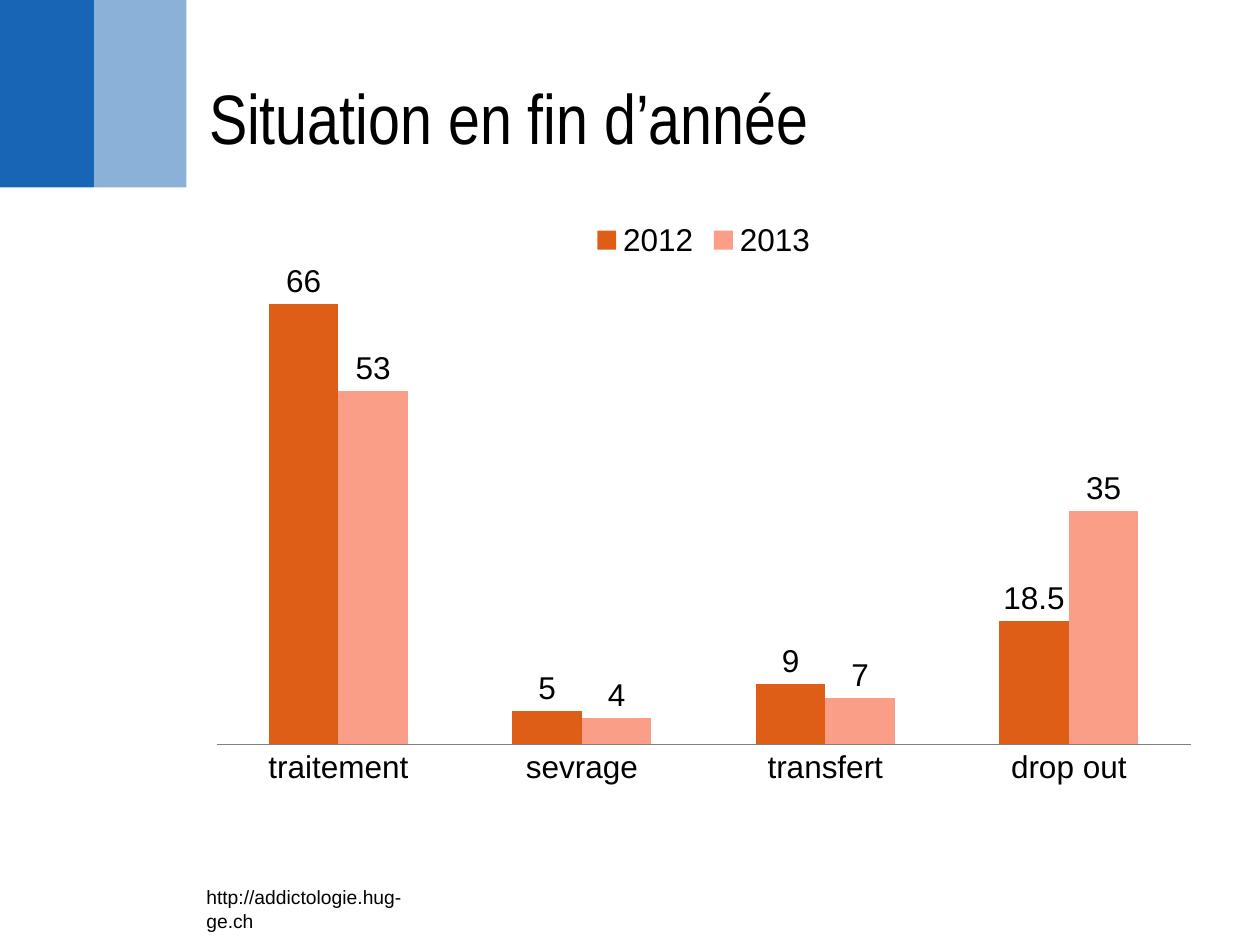
from lxml import etree
from pptx import Presentation
from pptx.chart.data import CategoryChartData
from pptx.dml.color import RGBColor
from pptx.enum.chart import (XL_CHART_TYPE, XL_LABEL_POSITION,
                             XL_LEGEND_POSITION, XL_TICK_MARK)
from pptx.enum.shapes import MSO_CONNECTOR, MSO_SHAPE
from pptx.enum.text import MSO_ANCHOR, PP_ALIGN
from pptx.oxml import parse_xml
from pptx.oxml.ns import nsdecls, qn
from pptx.util import Cm, Pt

COLUMN = XL_CHART_TYPE.COLUMN_CLUSTERED
OUTSIDE = XL_LABEL_POSITION.OUTSIDE_END
TOP = XL_LEGEND_POSITION.TOP
NO_TICK = XL_TICK_MARK.NONE
STRAIGHT = MSO_CONNECTOR.STRAIGHT
RECT = MSO_SHAPE.RECTANGLE
LEFT = PP_ALIGN.LEFT
MIDDLE = MSO_ANCHOR.MIDDLE
UPPER = MSO_ANCHOR.TOP

COLORS = {"text": "000000", "blue": "1864B5", "line": "0C72C0",
          "axis": "808080", "2012": "DE5E18", "2013": "FA9E88"}
CATS = ["traitement", "sevrage", "transfert", "drop out"]
SERIES = {"2012": [66, 5, 9, 18.5], "2013": [53, 4, 7, 35]}
BAND = 1.88  # width of one blue band, cm


def color(name):
    return RGBColor.from_string(COLORS[name])


class Page:
    """Holds the style and the current slide; lengths are in cm."""

    def __init__(self, slide, font="Arial"):
        self.slide = slide
        self.shapes = slide.shapes
        self.font = font

    def style(self, font, size, name=None):
        font.name = name or self.font
        font.size = Pt(size)
        font.color.rgb = color("text")

    def put(self, frame, text, size, name=None, anchor=UPPER):
        """Set one run of styled text in a frame."""
        frame.word_wrap = True
        frame.vertical_anchor = anchor
        para = frame.paragraphs[0]
        para.alignment = LEFT
        run = para.add_run()
        run.text = text
        self.style(run.font, size, name)

    def title(self, text, x, y, w, h):
        shape = self.shapes.title
        shape.left, shape.top, shape.width, shape.height = map(Cm, (x, y, w, h))
        self.put(shape.text_frame, text, 40, "Arial Narrow", MIDDLE)

    def text(self, text, x, y, w, h, size):
        box = self.shapes.add_textbox(Cm(x), Cm(y), Cm(w), Cm(h))
        self.put(box.text_frame, text, size)

    def band(self, x, y, w, h, alpha=100):
        shape = self.shapes.add_shape(RECT, Cm(x), Cm(y), Cm(w), Cm(h))
        shape.shadow.inherit = False
        shape.fill.solid()
        shape.fill.fore_color.rgb = color("blue")
        shape.line.fill.background()
        if alpha < 100:
            tone = shape._element.spPr.find(".//" + qn("a:srgbClr"))
            etree.SubElement(tone, qn("a:alpha"), val=str(alpha * 1000))

    def line(self, x1, y1, x2, y2):
        line = self.shapes.add_connector(STRAIGHT, Cm(x1), Cm(y1), Cm(x2), Cm(y2))
        line.line.color.rgb = color("line")
        line.line.width = Pt(1)
        etree.SubElement(line._element.spPr, qn("a:effectLst"))

    def chart(self, x, y, w, h):
        data = CategoryChartData()
        data.categories = CATS
        for name, vals in SERIES.items():
            data.add_series(name, vals)
        chart = self.shapes.add_chart(
            COLUMN, Cm(x), Cm(y), Cm(w), Cm(h), data).chart
        self.style(chart.font, 18)
        chart.has_title = False
        chart.has_legend = True
        chart.legend.position = TOP
        chart.legend.include_in_layout = False

        axis = chart.value_axis
        axis.visible = False
        axis.has_major_gridlines = False
        axis.minimum_scale, axis.maximum_scale = 0, 70
        axis = chart.category_axis
        axis.major_tick_mark = NO_TICK
        axis.format.line.color.rgb = color("axis")

        plot = chart.plots[0]
        plot.gap_width, plot.overlap = 150, 0
        plot.vary_by_categories = False
        for series in plot.series:
            series.format.fill.solid()
            series.format.fill.fore_color.rgb = color(series.name)
            labels = series.data_labels
            labels.show_value = True
            labels.position = OUTSIDE
            self.style(labels.font, 18)
        self.place(chart, x=0.02, y=0.12, w=0.96, h=0.79)

    def place(self, chart, **parts):
        """Fix the inner plot area as fractions of the chart."""
        area = chart._chartSpace.chart.plotArea
        for old in area.findall(qn("c:layout")):
            area.remove(old)
        rows = "".join(f'<c:{k}Mode val="edge"/>' for k in "xy")
        rows += "".join(f'<c:{k} val="{v}"/>' for k, v in parts.items())
        area.insert(0, parse_xml(
            f'<c:layout {nsdecls("c")}><c:manualLayout>'
            f'<c:layoutTarget val="inner"/>{rows}'
            '</c:manualLayout></c:layout>'))


def main():
    deck = Presentation()
    deck.slide_width, deck.slide_height = Cm(25.4), Cm(19.05)
    page = Page(deck.slides.add_slide(deck.slide_layouts[5]))
    page.line(BAND, 0, BAND, 3.76)
    page.text("http://addictologie.hug-ge.ch", 3.91, 17.73, 5.28, 0.74, 11)
    for i, alpha in enumerate((100, 50)):
        page.band(i * BAND, -0.02, BAND, 3.8, alpha)
    page.title("Situation en fin d’année", 3.96, 1.37, 15.42, 1.96)
    page.chart(3.96, 4.17, 20.45, 11.91)
    deck.save("out.pptx")


if __name__ == "__main__":
    main()
